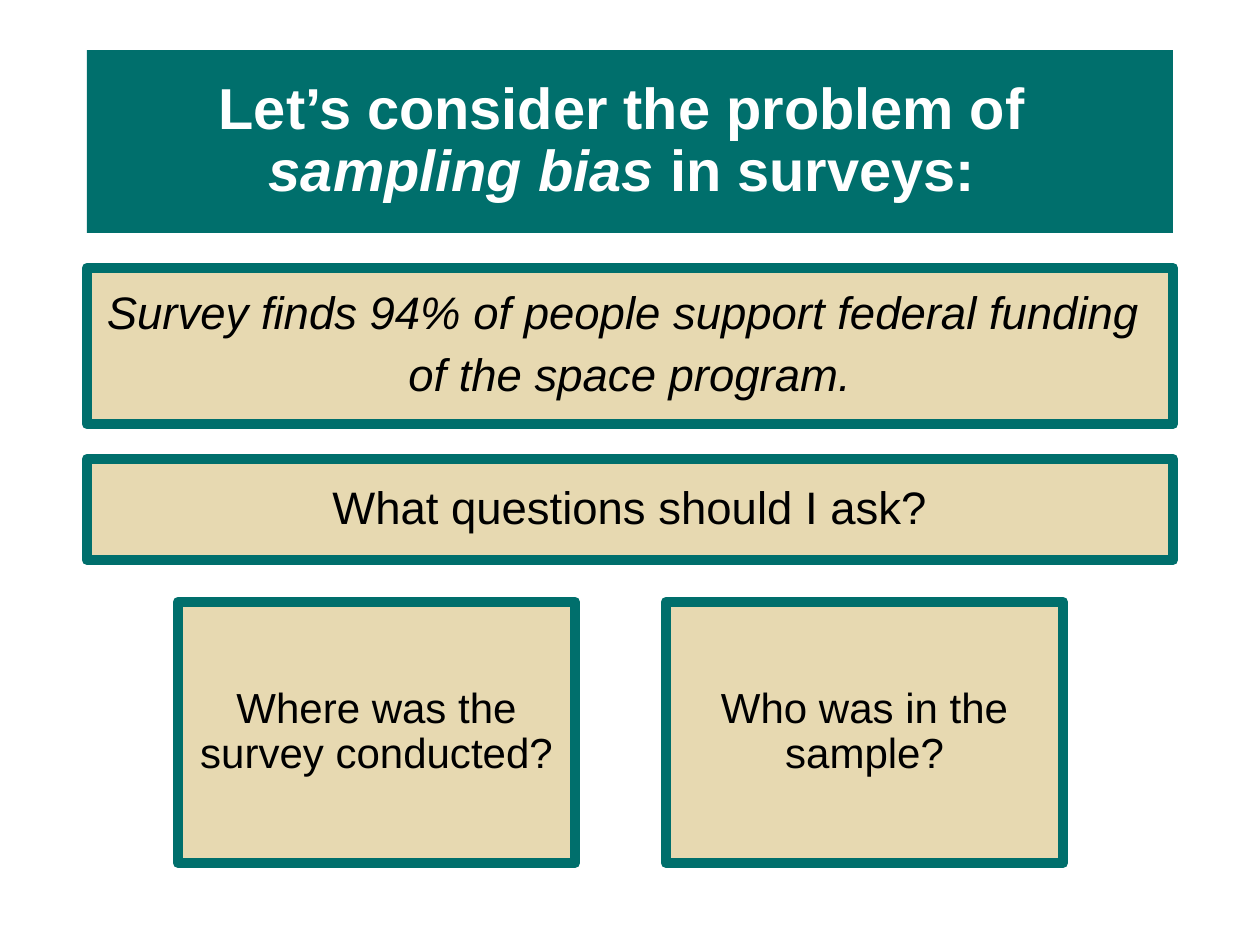
import pptx
import pptx.dml.color
import pptx.enum.shapes
import pptx.enum.text
import pptx.util

PX = 914400 / 126
TEAL, SAND, BLACK, WHITE = "006F6C", "E7D9B1", "000000", "FFFFFF"


def px(length):
    return pptx.util.Emu(round(length * PX))


def rgb(value):
    return pptx.dml.color.RGBColor.from_string(value)


deck = pptx.Presentation()
deck.slide_width, deck.slide_height = px(1260), px(945)
slide = deck.slides.add_slide(deck.slide_layouts[6])

# Formats: heading bar, statements, follow-up questions
heading = {"size": pptx.util.Pt(33), "bold": True, "name": "Arial"}
statement = {"size": pptx.util.Pt(26), "name": "Arial"}
question = {"size": pptx.util.Pt(24), "name": "Arial"}

# Each panel: box in px, format, paragraphs of (text, italic) runs
full_left, full_width = 87, 1086
question_left, question_step, question_width = 178, 488, 397
panels = [
    ((full_left, 50, full_width, 183), heading,
     [[("Let’s consider the problem of \v", False),
       ("sampling bias ", True), ("in surveys: ", False)]]),
    ((full_left, 268, full_width, 156), statement,
     [[("Survey finds 94% of people support federal funding ", True)],
      [("of the space program.", True)]]),
    ((full_left, 459, full_width, 101), statement,
     [[("What questions should I ask?", False)]]),
]
for column, wording in enumerate(["Where was the survey conducted?",
                                  "Who was in the sample?"]):
    left = question_left + column * question_step
    panels.append(((left, 602, question_width, 261), question,
                   [[(wording, False)]]))

# Draw the panels from top to bottom
for box, font_format, paragraphs in panels:
    is_heading = font_format is heading
    panel = slide.shapes.add_shape(
        pptx.enum.shapes.MSO_SHAPE.RECTANGLE, *map(px, box))
    panel.shadow.inherit = False
    panel.fill.solid()
    panel.fill.fore_color.rgb = rgb(TEAL if is_heading else SAND)
    if is_heading:
        panel.line.fill.background()
    else:
        panel.line.color.rgb = rgb(TEAL)
        panel.line.width = pptx.util.Pt(6)

    frame = panel.text_frame
    frame.word_wrap = True
    frame.vertical_anchor = pptx.enum.text.MSO_ANCHOR.MIDDLE
    for index, runs in enumerate(paragraphs):
        paragraph = frame.add_paragraph() if index else frame.paragraphs[0]
        paragraph.alignment = pptx.enum.text.PP_ALIGN.CENTER
        paragraph.line_spacing = 0.9
        paragraph.space_before = pptx.util.Pt(0 if is_heading else 7.5)
        for wording, italic in runs:
            run = paragraph.add_run()
            run.text = wording.rstrip("\v")
            for attribute, value in font_format.items():
                setattr(run.font, attribute, value)
            run.font.italic = italic
            run.font.color.rgb = rgb(WHITE if is_heading else BLACK)
            if wording.endswith("\v"):
                paragraph.add_line_break()

deck.save("out.pptx")
